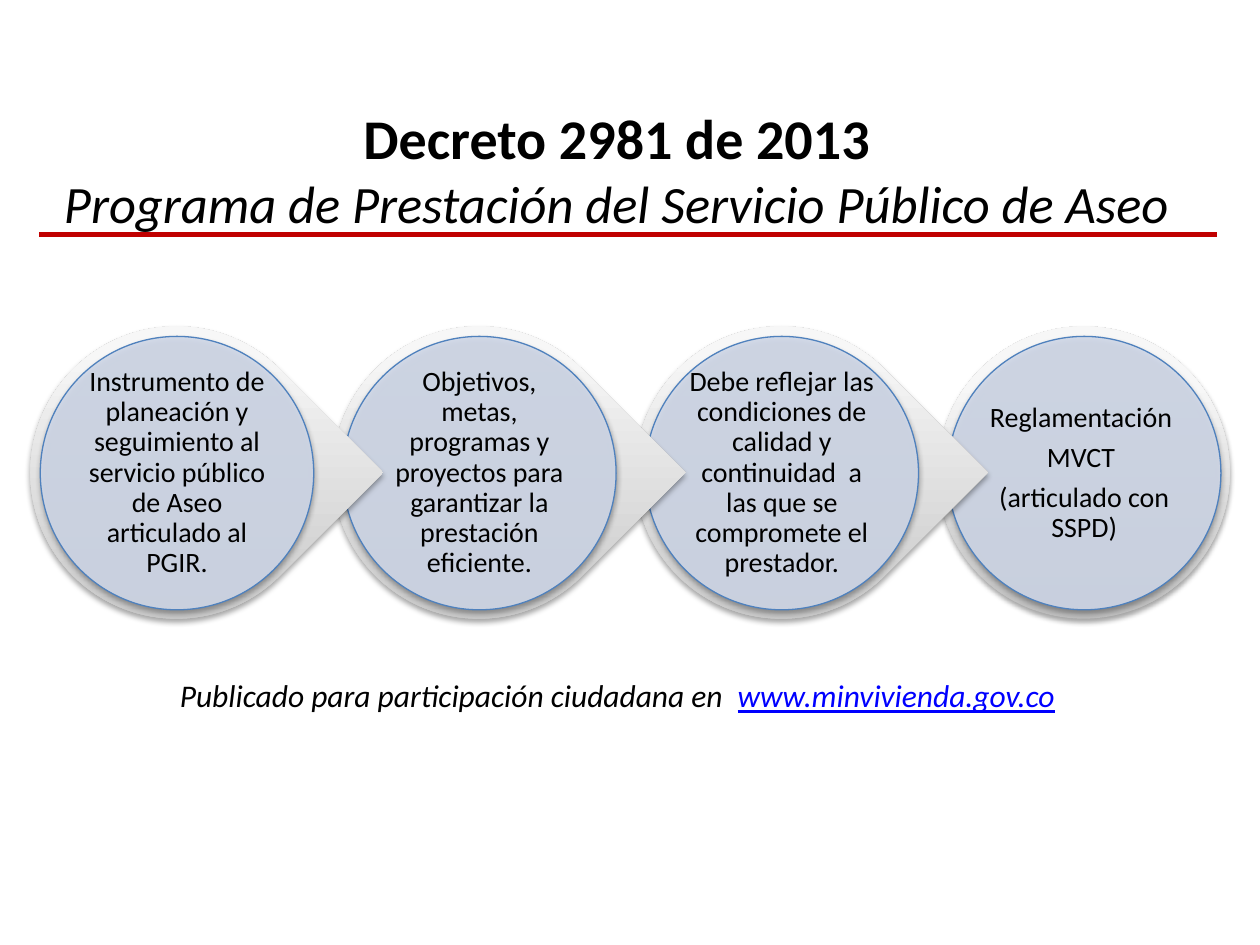
from pptx import Presentation
from pptx import util as u
from pptx.dml.color import RGBColor
from pptx.enum import shapes, text
from pptx.oxml import parse_xml
from pptx.oxml.ns import nsdecls, qn

BLACK = RGBColor(0x00, 0x00, 0x00)
RED = RGBColor(0xC0, 0x00, 0x00)
PALE = RGBColor(0xD0, 0xD8, 0xE8)
BLUE = RGBColor(0x4F, 0x81, 0xBD)
LINK = RGBColor(0x00, 0x00, 0xFF)
SILVER = ((0, RGBColor(0xBE, 0xBE, 0xBE)),
          (80, RGBColor(0xF7, 0xF7, 0xF7)),
          (100, RGBColor(0xF8, 0xF8, 0xF8)))

STEPS = [
    ["Instrumento de planeación y seguimiento al servicio público de Aseo "
     "articulado al PGIR."],
    ["Objetivos, metas, programas y proyectos para garantizar la prestación "
     "eficiente."],
    ["Debe reflejar las condiciones de calidad y continuidad  a las que se "
     "compromete el prestador."],
    ["Reglamentación ", "MVCT ", "(articulado con SSPD)"],
]


class Deck:
    font = "Calibri"
    columns = 100

    def __init__(self):
        self.prs = Presentation()
        self.prs.slide_width, self.prs.slide_height = u.Inches(10), u.Inches(7.5)
        self.cell = self.prs.slide_width / self.columns
        self.s = self.prs.slides.add_slide(self.prs.slide_layouts[5])

    def grid(self, *cells):
        return [round(c * self.cell) for c in cells]

    def style(self, r, size, color=BLACK, bold=False, italic=False):
        f = r.font
        f.size, f.name, f.bold, f.italic = u.Pt(size), self.font, bold, italic
        f.color.rgb = color

    def title(self, box, heading, subtitle):
        sp = self.s.shapes.title
        sp.left, sp.top, sp.width, sp.height = self.grid(*box)
        tf = sp.text_frame
        tf.text = f"{heading}\v{subtitle}"
        tf.vertical_anchor = text.MSO_ANCHOR.TOP
        p = tf.paragraphs[0]
        p.alignment = text.PP_ALIGN.CENTER
        self.style(p.runs[0], 32, bold=True)
        self.style(p.runs[1], 30, italic=True)

    def rule(self, x1, x2, y):
        sp = self.s.shapes.add_connector(
            shapes.MSO_CONNECTOR.STRAIGHT, *self.grid(x1, y, x2, y))
        sp.line.color.rgb, sp.line.width = RED, u.Pt(3)
        sp._element.spPr.append(parse_xml(f'<a:effectLst {nsdecls("a")}/>'))

    def disc(self, kind, x, y, size):
        sp = self.s.shapes.add_shape(kind, *self.grid(x, y, size, size))
        sp.shadow.inherit = False
        sp._element.spPr.find(qn("a:effectLst")).append(parse_xml(
            f'<a:outerShdw {nsdecls("a")} blurRad="{u.Pt(3.1)}" dist="{u.Pt(1.8)}" '
            'dir="5400000" rotWithShape="0"><a:srgbClr val="000000">'
            '<a:alpha val="35000"/></a:srgbClr></a:outerShdw>'))
        sp.fill.solid()
        return sp, sp._element.spPr.find(qn("a:solidFill"))

    def backing(self, x, y, size, pointed):
        kind = shapes.MSO_SHAPE.TEAR if pointed else shapes.MSO_SHAPE.OVAL
        sp, fill = self.disc(kind, x, y, size)
        sp.rotation = 45 if pointed else 0
        sp.line.fill.background()
        stops = "".join(f'<a:gs pos="{at * 1000}"><a:srgbClr val="{c}"/></a:gs>'
                        for at, c in SILVER)
        fill.getparent().replace(fill, parse_xml(
            f'<a:gradFill {nsdecls("a")} rotWithShape="0"><a:gsLst>{stops}</a:gsLst>'
            '<a:lin ang="16200000" scaled="0"/></a:gradFill>'))

    def face(self, x, y, size):
        sp, fill = self.disc(shapes.MSO_SHAPE.OVAL, x, y, size)
        sp.fill.fore_color.rgb = PALE
        fill[0].append(parse_xml(f'<a:alpha {nsdecls("a")} val="90000"/>'))
        sp.line.color.rgb, sp.line.width = BLUE, u.Pt(0.75)

    def label(self, x, y, size, lines):
        tf = self.s.shapes.add_textbox(*self.grid(x, y, size, size)).text_frame
        tf.text = "\n".join(lines)
        tf.word_wrap = True
        tf.vertical_anchor = text.MSO_ANCHOR.MIDDLE
        tf.margin_left = tf.margin_right = u.Inches(0.02)
        tf.margin_top = tf.margin_bottom = u.Inches(0.02)
        for p in tf.paragraphs:
            p.alignment = text.PP_ALIGN.CENTER
            p.line_spacing, p.space_after = 0.9, u.Pt(5.6)
            self.style(p.runs[0], 16)

    def step(self, x, y, lines, pointed):
        self.backing(x, y, 23.2, pointed)
        self.face(x + 0.8, y + 0.8, 21.7)
        self.label(x + 3.9, y + 3.9, 15.5, lines)

    def note(self, box, words, address):
        tf = self.s.shapes.add_textbox(*self.grid(*box)).text_frame
        tf.word_wrap = True
        p = tf.paragraphs[0]
        p.text = words
        p.alignment = text.PP_ALIGN.CENTER
        self.style(p.runs[0], 18, italic=True)
        r = p.add_run()
        r.text = address
        self.style(r, 18, LINK, italic=True)
        r.font.underline = True


def main():
    d = Deck()
    d.title((0, 7.7, 97.9, 12.5), "Decreto 2981 de 2013",
            "Programa de Prestación del Servicio Público de Aseo")
    d.rule(3.1, 96.6, 18.6)
    last = len(STEPS) - 1
    for i in range(last, -1, -1):
        d.step(2.4 + 24 * i, 25.9, STEPS[i], pointed=i < last)
    d.note((1.7, 53.2, 94.6, 4), "Publicado para participación ciudadana en  ",
           "www.minvivienda.gov.co")
    d.prs.save("out.pptx")


if __name__ == "__main__":
    main()
